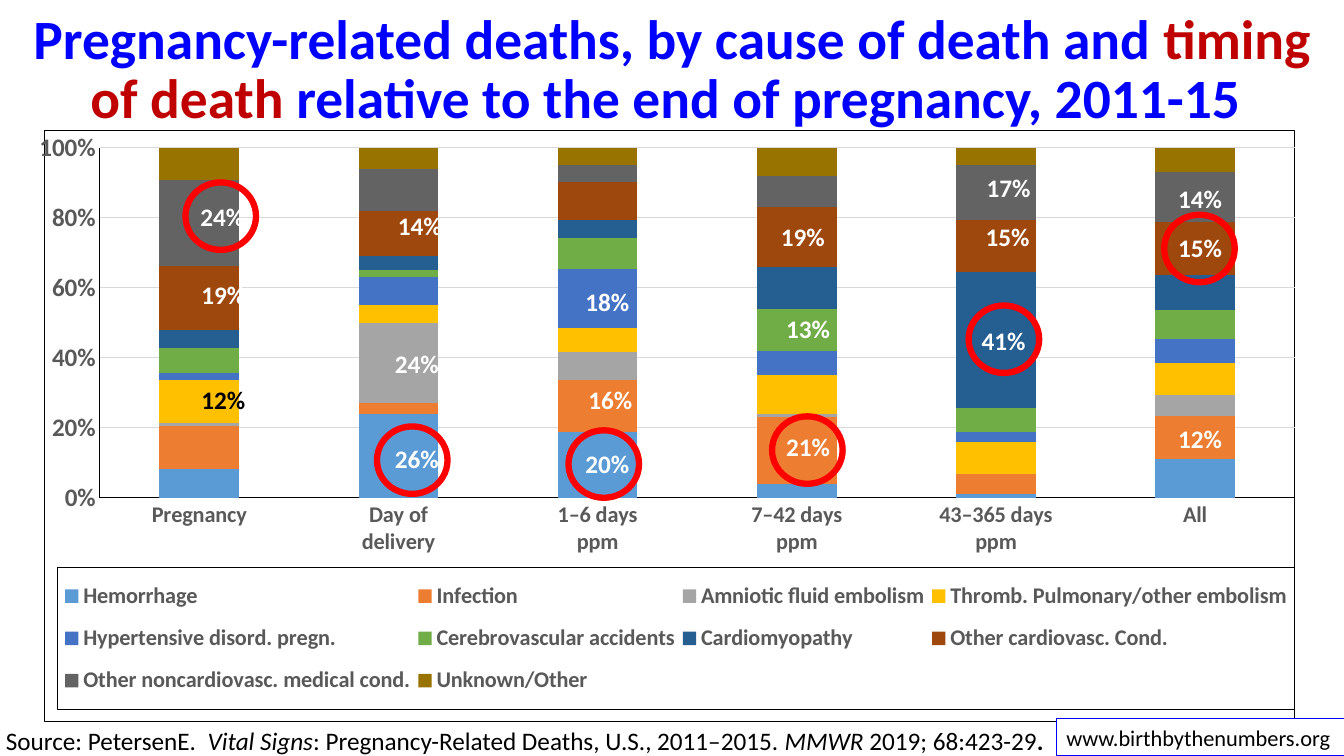
from lxml import etree
from pptx import Presentation
from pptx.chart.data import CategoryChartData
from pptx.dml.color import RGBColor
from pptx.enum.chart import XL_CHART_TYPE as Kind, XL_LEGEND_POSITION as Side, XL_TICK_MARK as Tick
from pptx.enum.shapes import MSO_SHAPE as Form
from pptx.enum.text import MSO_ANCHOR as Anchor, PP_ALIGN as Align
from pptx.oxml import parse_xml
from pptx.oxml.ns import nsdecls, qn
from pptx.util import Pt

BLACK, WHITE, GREY = "000000", "FFFFFF", "595959"
BLUE, RED = "0000FF", "FF0000"

GROUPS = ["Pregnancy", "Day of\ndelivery", "1–6 days\nppm",
          "7–42 days\nppm", "43–365 days\nppm", "All"]
CAUSES = [
    ("Hemorrhage", "5B9BD5", [8, 24, 19, 4, 1, 11]),
    ("Infection", "ED7D31", [12, 3, 15, 19, 6, 12]),
    ("Amniotic fluid embolism", "A5A5A5", [1, 23, 8, 1, 0, 6]),
    ("Thromb. Pulmonary/other embolism", "FFC000", [12, 5, 7, 11, 9, 9]),
    ("Hypertensive disord. pregn.", "4472C4", [2, 8, 17, 7, 3, 7]),
    ("Cerebrovascular accidents", "70AD47", [7, 2, 9, 12, 7, 8]),
    ("Cardiomyopathy", "255E91", [5, 4, 5, 12, 39, 10]),
    ("Other cardiovasc. Cond.", "9E480E", [18, 13, 11, 17, 15, 15]),
    ("Other noncardiovasc. medical cond.", "636363", [24, 12, 5, 9, 16, 14]),
    ("Unknown/Other", "997300", [9, 6, 5, 8, 5, 7]),
]
# Share of deaths, left, top
SHARES = [
    ("24%", 136, 140.4), ("19%", 136.8, 195.8), ("12%", 136.8, 270.7),
    ("14%", 277.2, 146.9), ("24%", 275, 245.5), ("26%", 275, 313.2),
    ("18%", 411.1, 200.9), ("16%", 413.3, 270.7), ("20%", 411.1, 316.8),
    ("19%", 550.8, 154.8), ("13%", 554.4, 220.3), ("21%", 554.4, 304.6),
    ("17%", 697.7, 119.5), ("15%", 697, 154.8), ("41%", 694.1, 229),
    ("14%", 834.5, 127.4), ("15%", 834.5, 162.7), ("12%", 834.5, 298.8),
]
RINGS = [(132.5, 130.3), (269.3, 304.6), (406.1, 307.4),
         (551.5, 297.4), (691.9, 218.2), (831.6, 153.4)]


def color(code):
    return RGBColor.from_string(code)


def layout(x, y, wide, high, inner=False):
    """Chart layout element, in fractions of the chart's size."""
    target = '<c:layoutTarget val="inner"/>' if inner else ""
    sizes = "".join(f'<c:{tag} val="{val}"/>'
                    for tag, val in zip("xywh", (x, y, wide, high)))
    return parse_xml(
        f'<c:layout {nsdecls("c")}><c:manualLayout>{target}<c:xMode val="edge"/>'
        f'<c:yMode val="edge"/>{sizes}</c:manualLayout></c:layout>')


def border(code):
    """Shape properties element with no fill and a thin line."""
    return parse_xml(
        f'<c:spPr {nsdecls("c", "a")}><a:noFill/><a:ln w="9525"><a:solidFill>'
        f'<a:srgbClr val="{code}"/></a:solidFill></a:ln></c:spPr>')


class Board:
    def __init__(self, slide, face):
        self.slide, self.face = slide, face

    def style(self, font, size, code, bold=False, italic=False):
        font.name, font.size = self.face, Pt(size)
        font.bold, font.italic = bold, italic
        font.color.rgb = color(code)

    def text(self, box, parts, size, wrap=True):
        """Each part is (text, colour, bold, italic), the last two optional."""
        frame = box.text_frame
        frame.word_wrap = wrap
        para = frame.paragraphs[0]
        para.alignment = Align.LEFT
        for words, *look in parts:
            run = para.add_run()
            run.text = words
            self.style(run.font, size, *look)
        return frame

    def label(self, area, parts, size, wrap=True):
        box = self.slide.shapes.add_textbox(*map(Pt, area))
        return self.text(box, parts, size, wrap)

    def shape(self, form, area, line, width, fill=None):
        item = self.slide.shapes.add_shape(form, *map(Pt, area))
        item.shadow.inherit = False
        if fill:
            item.fill.solid()
            item.fill.fore_color.rgb = color(fill)
        else:
            item.fill.background()
        item.line.color.rgb = color(line)
        item.line.width = Pt(width)
        return item

    def axis(self, axis, size):
        axis.major_tick_mark = axis.minor_tick_mark = Tick.NONE
        self.style(axis.tick_labels.font, size, GREY, True)
        axis.format.line.color.rgb = color(BLACK)
        axis.format.line.width = Pt(0.75)

    def legend(self, chart, place):
        chart.has_legend = True
        key = chart.legend
        key.position = Side.BOTTOM
        key.include_in_layout = False
        self.style(key.font, 16, GREY, True)
        node = key._element
        node.find(qn("c:legendPos")).addnext(layout(*place))
        node.find(qn("c:overlay")).addnext(border(BLACK))

    def chart(self, area):
        data = CategoryChartData(number_format="0")
        data.categories = GROUPS
        for name, _, vals in CAUSES:
            data.add_series(name, vals)
        chart = self.slide.shapes.add_chart(
            Kind.COLUMN_STACKED_100, *map(Pt, area), data).chart
        chart.has_title = False
        self.style(chart.font, 10, BLACK)
        plot = chart.plots[0]
        plot.gap_width, plot.overlap = 150, 100
        plot.vary_by_categories = False
        for bar, (_, code, _) in zip(plot.series, CAUSES):
            bar.format.fill.solid()
            bar.format.fill.fore_color.rgb = color(code)

        self.axis(chart.category_axis, 16)
        scale = chart.value_axis
        self.axis(scale, 18)
        scale.minimum_scale, scale.maximum_scale, scale.major_unit = 0, 1, 0.2
        scale.tick_labels.number_format = "0%"
        scale.tick_labels.number_format_is_linked = False
        grid = scale.major_gridlines.format.line
        grid.color.rgb, grid.width = color("D9D9D9"), Pt(0.75)

        self.legend(chart, (0.01, 0.74, 0.99, 0.24))
        root = chart._chartSpace
        root.find(qn("c:chart")).addnext(border(BLACK))
        space = root.find(".//" + qn("c:plotArea"))
        for old in space.findall(qn("c:layout")):
            space.remove(old)
        space.insert(0, layout(0.044, 0.029, 0.956, 0.593, inner=True))


def main():
    deck = Presentation()
    deck.slide_width, deck.slide_height = Pt(960), Pt(540)
    board = Board(deck.slides.add_slide(deck.slide_layouts[6]), "Calibri")

    title = board.label((0, 0, 960, 101.5), [
        ("Pregnancy-related deaths, by cause of death and ", BLUE, True),
        ("timing of death", "C00000", True),
        (" relative to the end of pregnancy, 2011-15 ", BLUE, True)], 39.6)
    title.vertical_anchor = Anchor.MIDDLE
    title.paragraphs[0].alignment = Align.CENTER
    title.paragraphs[0].line_spacing = 0.9

    board.chart((28.1, 92.9, 897.1, 422.6))
    board.label((-2.9, 514.8, 774.7, 29), [
        ("Source: PetersenE.  ", BLACK),
        ("Vital Signs", BLACK, False, True),
        (": Pregnancy-Related Deaths, U.S., 2011–2015. ", BLACK),
        ("MMWR", BLACK, False, True),
        (" 2019; 68:423-29", BLACK),
        (".", BLACK, True)], 18)

    for share, x, y in SHARES:
        code = BLACK if (share, x) == ("12%", 136.8) else WHITE
        board.label((x, y, 46.1, 29), [(share, code, True)], 18, wrap=False)

    site = board.shape(Form.RECTANGLE, (754.6, 513.4, 205.9, 26.6), BLUE, 0.75, WHITE)
    board.text(site, [("www.birthbythenumbers.org", BLACK)], 16, wrap=False)
    for x, y in RINGS:
        board.shape(Form.OVAL, (x, y, 50.4, 48.2), RED, 4.5)

    deck.save("out.pptx")


if __name__ == "__main__":
    main()
